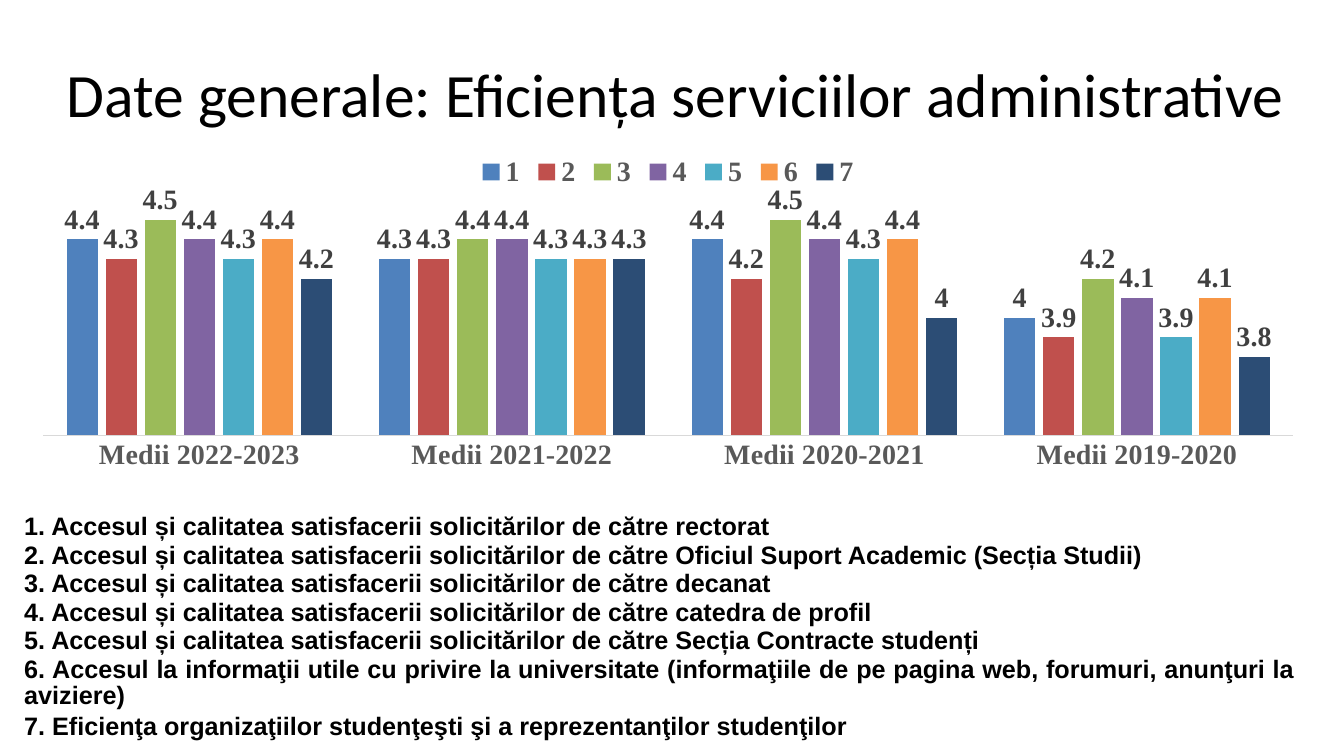
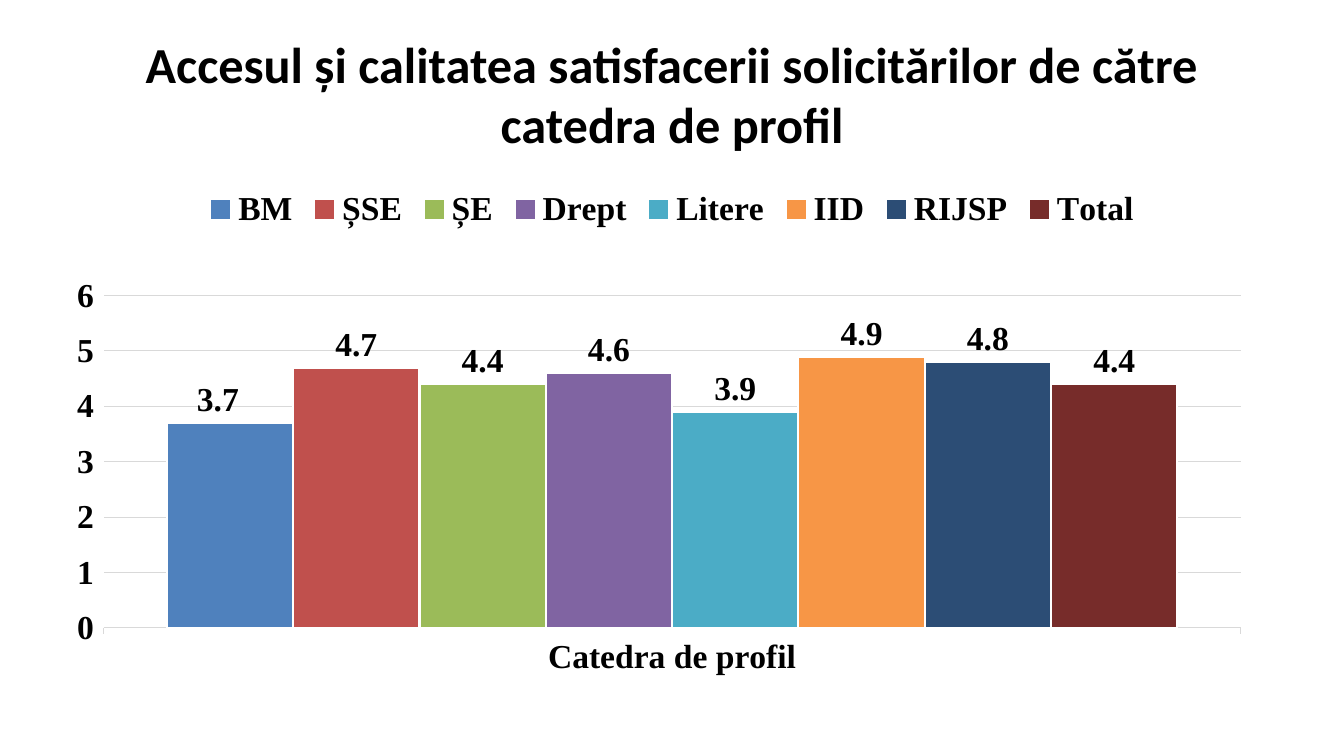
from dataclasses import dataclass

from lxml import etree
from pptx import Presentation
from pptx.chart.data import CategoryChartData
from pptx.dml.color import RGBColor
from pptx.enum.chart import XL_CHART_TYPE as ChartType
from pptx.enum.chart import XL_LABEL_POSITION as LabelPos
from pptx.enum.chart import XL_LEGEND_POSITION as LegendPos
from pptx.enum.chart import XL_TICK_MARK as Tick
from pptx.enum.text import MSO_ANCHOR as Anchor
from pptx.enum.text import PP_ALIGN as Align
from pptx.oxml.ns import qn
from pptx.util import Cm, Pt


@dataclass(frozen=True)
class Theme:
    text: str = "000000"
    paper: str = "FFFFFF"
    rule: str = "D9D9D9"
    muted: str = "595959"
    label: str = "404040"
    series: tuple = ("4F81BD", "C0504D", "9BBB59", "8064A2",
                     "4BACC6", "F79646", "2C4D75", "772C2A")
    title_font: str = "Calibri"
    body_font: str = "Arial"
    chart_font: str = "Times New Roman"
    title_size: int = 44
    long_title_size: int = 36
    body_size: int = 18
    dense_chart_size: int = 20
    chart_size: int = 24


def set_font(font, name, size, color, bold=True):
    font.name = name
    font.size = Pt(size)
    font.bold = bold
    font.color.rgb = RGBColor.from_string(color)


def set_line(line, color, width):
    line.color.rgb = RGBColor.from_string(color)
    line.width = Pt(width)


def manual_layout(**values):
    layout = etree.Element(qn("c:layout"))
    manual = etree.SubElement(layout, qn("c:manualLayout"))
    for tag, value in values.items():
        etree.SubElement(manual, qn(f"c:{tag}")).set("val", str(value))
    return layout


class Deck:
    def __init__(self, theme):
        self.theme = theme
        self.prs = Presentation()
        self.prs.slide_width = Cm(33.87)
        self.prs.slide_height = Cm(19.05)
        self.s = None

    def slide(self):
        self.s = self.prs.slides.add_slide(self.prs.slide_layouts[6])

    def title(self, text, left, width, size, bold=False):
        tf = self.s.shapes.add_textbox(
            Cm(left), Cm(0.76), Cm(width), Cm(3.18)).text_frame
        tf.word_wrap = True
        tf.vertical_anchor = Anchor.MIDDLE
        p = tf.paragraphs[0]
        p.text = text
        p.alignment = Align.CENTER
        set_font(p.font, self.theme.title_font, size, self.theme.text, bold)

    def chart(self, box, categories, series, size, color, label_color,
              gap, plot_box, scale, overlap=0):
        t = self.theme
        data = CategoryChartData()
        data.categories = categories
        for name, values in series.items():
            data.add_series(name, values)
        chart = self.s.shapes.add_chart(
            ChartType.COLUMN_CLUSTERED, *map(Cm, box), data).chart
        chart.has_title = False
        set_font(chart.font, t.chart_font, size, color)

        chart.has_legend = True
        chart.legend.position = LegendPos.TOP
        chart.legend.include_in_layout = False
        set_font(chart.legend.font, t.chart_font, size, color)

        plot = chart.plots[0]
        plot.vary_by_categories = False
        plot.gap_width = gap
        plot.overlap = overlap
        plot.has_data_labels = True
        labels = plot.data_labels
        labels.show_value = True
        labels.position = LabelPos.OUTSIDE_END
        set_font(labels.font, t.chart_font, size, label_color)
        for ser, fill in zip(plot.series, t.series):
            ser.invert_if_negative = False
            ser.format.fill.solid()
            ser.format.fill.fore_color.rgb = RGBColor.from_string(fill)

        set_line(chart.category_axis.format.line, t.rule, 0.75)
        chart.category_axis.major_tick_mark = Tick.NONE
        axis = chart.value_axis
        axis.minimum_scale, axis.maximum_scale = scale
        axis.has_major_gridlines = False
        axis.visible = False

        area = chart.element.find(".//" + qn("c:plotArea"))
        for old in area.findall(qn("c:layout")):
            area.remove(old)
        x, y, w, h = plot_box
        area.insert(0, manual_layout(layoutTarget="inner", xMode="edge",
                                     yMode="edge", x=x, y=y, w=w, h=h))
        return chart

    def show_scale(self, chart, size):
        t = self.theme
        chart.category_axis.major_tick_mark = Tick.OUTSIDE
        axis = chart.value_axis
        axis.visible = True
        axis.major_unit = 1
        axis.format.line.fill.background()
        axis.has_major_gridlines = True
        set_line(axis.major_gridlines.format.line, t.rule, 0.75)
        set_font(axis.tick_labels.font, t.chart_font, size, t.text)

    def outline_columns(self, chart):
        for ser in chart.plots[0].series:
            set_line(ser.format.line, self.theme.paper, 1.5)

    def shift_label(self, chart, series_index, dx, size):
        label = chart.plots[0].series[series_index].points[0].data_label
        set_font(label.font, self.theme.chart_font, size, self.theme.text)
        label.position = LabelPos.OUTSIDE_END
        idx = chart.element.find(".//" + qn("c:dLbl") + "/" + qn("c:idx"))
        idx.addnext(manual_layout(x=dx, y=0))

    def statements(self, box, rows, heights):
        t = self.theme
        table = self.s.shapes.add_table(len(rows), 1, *map(Cm, box)).table
        table.first_row = table.horz_banding = False
        for i, (text, height) in enumerate(zip(rows, heights)):
            table.rows[i].height = Cm(height)
            cell = table.cell(i, 0)
            cell.fill.solid()
            cell.fill.fore_color.rgb = RGBColor.from_string(t.paper)
            cell.margin_left = cell.margin_right = Cm(0.18)
            cell.margin_top = cell.margin_bottom = 0
            p = cell.text_frame.paragraphs[0]
            p.text = text
            p.alignment = Align.JUSTIFY
            p.line_spacing = 0.94
            set_font(p.font, t.body_font, t.body_size, t.text)


def services_slide(deck):
    t = deck.theme
    deck.slide()
    deck.title("Date generale: Eficiența serviciilor administrative",
               0.84, 32.39, t.title_size)
    years = [f"Medii {y}-{y + 1}" for y in range(2022, 2018, -1)]
    scores = {
        "1": (4.4, 4.3, 4.4, 4),
        "2": (4.3, 4.3, 4.2, 3.9),
        "3": (4.5, 4.4, 4.5, 4.2),
        "4": (4.4, 4.4, 4.4, 4.1),
        "5": (4.3, 4.3, 4.3, 3.9),
        "6": (4.4, 4.3, 4.4, 4.1),
        "7": (4.2, 4.3, 4, 3.8),
    }
    deck.chart((0.43, 3.61, 32.82, 8.46), years, scores,
               t.dense_chart_size, t.muted, t.label, gap=150, overlap=-25,
               plot_box=(0.02, 0.17, 0.96, 0.7), scale=(3.4, 4.6))
    access = "Accesul și calitatea satisfacerii solicitărilor de către"
    offices = ("rectorat", "Oficiul Suport Academic (Secția Studii)",
               "decanat", "catedra de profil", "Secția Contracte studenți")
    rows = [f"{access} {office}" for office in offices] + [
        "Accesul la informaţii utile cu privire la universitate "
        "(informaţiile de pe pagina web, forumuri, anunţuri la aviziere)",
        "Eficienţa organizaţiilor studenţeşti şi a reprezentanţilor "
        "studenţilor",
    ]
    deck.statements((0.43, 12.97, 32.39, 5.41),
                    [f"{n}. {row}" for n, row in enumerate(rows, 1)],
                    (0.69, 0.61, 0.69, 0.69, 0.69, 0.84, 0.69))


def department_slide(deck):
    t = deck.theme
    deck.slide()
    deck.title("Accesul și calitatea satisfacerii solicitărilor de către "
               "catedra de profil", 1.7, 30.48, t.long_title_size, bold=True)
    scores = {"BM": 3.7, "ȘSE": 4.7, "ȘE": 4.4, "Drept": 4.6,
              "Litere": 3.9, "IID": 4.9, "RIJSP": 4.8, "Total": 4.4}
    chart = deck.chart((1.7, 4.45, 30.48, 12.57), ["Catedra de profil"],
                       {name: (score,) for name, score in scores.items()},
                       t.chart_size, t.text, t.text, gap=100,
                       plot_box=(0.03, 0.24, 0.94, 0.67), scale=(0, 6))
    deck.show_scale(chart, t.chart_size)
    deck.outline_columns(chart)
    deck.shift_label(chart, 0, -0.01, t.chart_size)


def main():
    deck = Deck(Theme())
    services_slide(deck)
    department_slide(deck)
    deck.prs.save("out.pptx")


if __name__ == "__main__":
    main()
